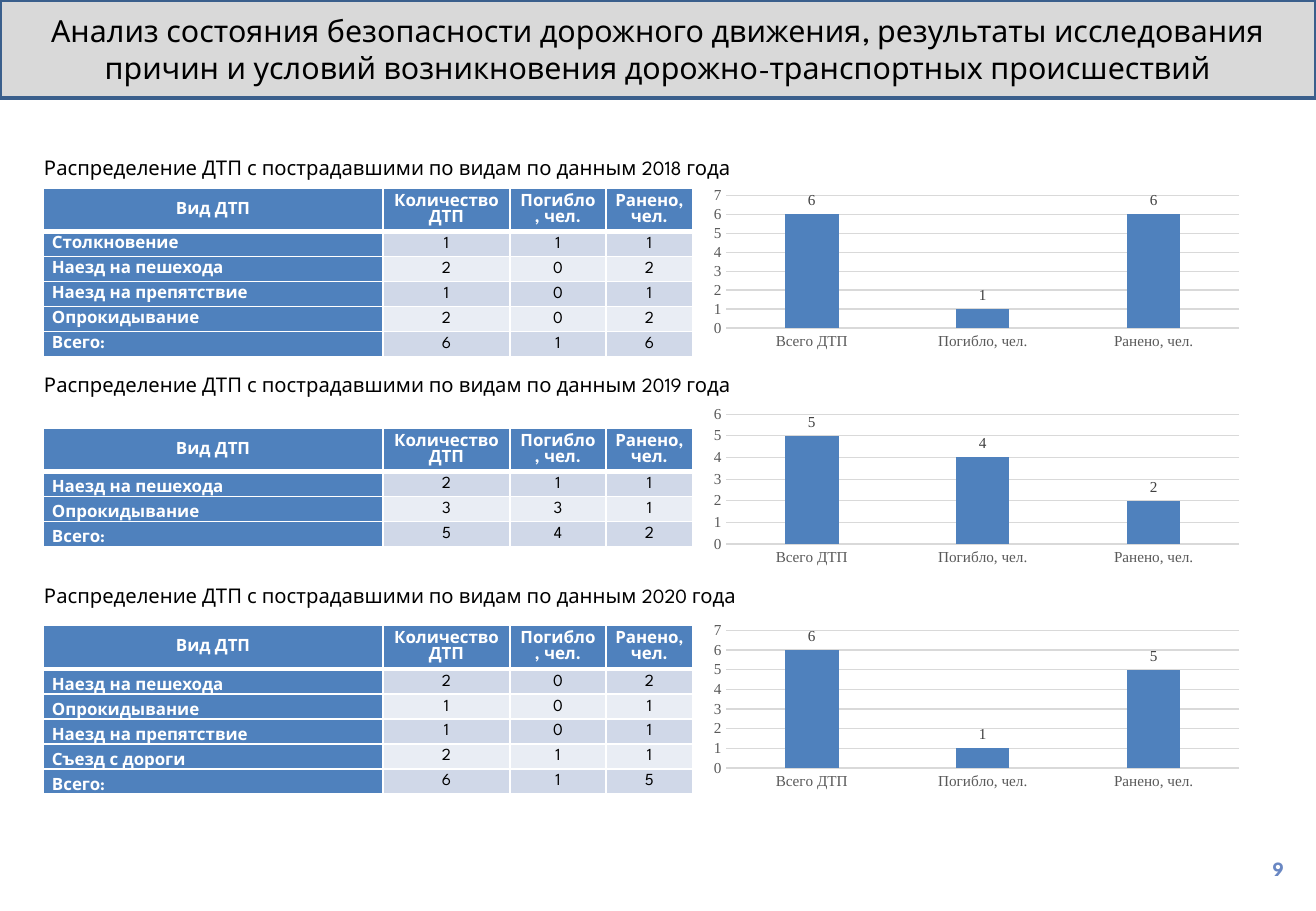
import pptx
import pptx.util
import pptx.chart.data
import pptx.dml.color
import pptx.enum.chart
import pptx.enum.shapes
import pptx.enum.text
import pptx.oxml

RGBColor = pptx.dml.color.RGBColor
BLACK = RGBColor(0x00, 0x00, 0x00)
WHITE = RGBColor(0xFF, 0xFF, 0xFF)
BLUE = RGBColor(0x4F, 0x81, 0xBD)
BORDER = RGBColor(0x3A, 0x5F, 0x8C)
BAND = RGBColor(0xD0, 0xD8, 0xE8)
PALE = RGBColor(0xE9, 0xED, 0xF4)
TITLE_GRAY = RGBColor(0xD9, 0xD9, 0xD9)
AXIS_TEXT = RGBColor(0x59, 0x59, 0x59)
LABEL_TEXT = RGBColor(0x40, 0x40, 0x40)
NUMBER = RGBColor(0x69, 0x87, 0xC3)

PX = 7526
SANS = "League Spartan"
SERIF = "Times New Roman"
ALIGN = pptx.enum.text.PP_ALIGN
ANCHOR = pptx.enum.text.MSO_ANCHOR
XL = pptx.enum.chart
NS = "http://schemas.openxmlformats.org/drawingml/2006/main"


def set_font(font, color, **values):
    for name, value in values.items():
        setattr(font, name, pptx.util.Pt(value) if name == "size" else value)
    font.color.rgb = color


def set_text(tf, text, align, color, **values):
    tf.word_wrap = True
    p = tf.paragraphs[0]
    p.alignment = align
    r = p.add_run()
    r.text = text
    set_font(r.font, color, name=SANS, **values)
    return p


prs = pptx.Presentation()
prs.slide_width, prs.slide_height = 1316 * PX, 911 * PX
s = prs.slides.add_slide(prs.slide_layouts[6])

title = s.shapes.add_shape(pptx.enum.shapes.MSO_SHAPE.RECTANGLE, 0, 0, 1316 * PX, 98 * PX)
title.shadow.inherit = False
title.fill.solid()
title.fill.fore_color.rgb = TITLE_GRAY
title.line.color.rgb = BORDER
title.line.width = pptx.util.Pt(2)
title.text_frame.vertical_anchor = ANCHOR.MIDDLE
set_text(title.text_frame, "Анализ состояния безопасности дорожного движения, результаты исследования "
         "причин и условий возникновения дорожно-транспортных происшествий", ALIGN.CENTER, BLACK, size=18)

header = ["Вид ДТП", "Количество ДТП", "Погибло, чел.", "Ранено, чел."]
col_widths = [340, 127, 96, 87]
years = [
    {"year": 2018, "caption": 149, "table": 188, "head": 34, "anchor": ANCHOR.MIDDLE,
     "chart": (183, 171), "max": 7,
     "rows": [["Столкновение", 1, 1, 1], ["Наезд на пешехода", 2, 0, 2],
              ["Наезд на препятствие", 1, 0, 1], ["Опрокидывание", 2, 0, 2], ["Всего:", 6, 1, 6]]},
    {"year": 2019, "caption": 366, "table": 428, "head": 42, "anchor": ANCHOR.BOTTOM,
     "chart": (402, 168), "max": 6,
     "rows": [["Наезд на пешехода", 2, 1, 1], ["Опрокидывание", 3, 3, 1], ["Всего:", 5, 4, 2]]},
    {"year": 2020, "caption": 577, "table": 625, "head": 44, "anchor": ANCHOR.BOTTOM,
     "chart": (618, 176), "max": 7,
     "rows": [["Наезд на пешехода", 2, 0, 2], ["Опрокидывание", 1, 0, 1],
              ["Наезд на препятствие", 1, 0, 1], ["Съезд с дороги", 2, 1, 1], ["Всего:", 6, 1, 5]]},
]

for item in years:
    caption = s.shapes.add_textbox(32 * PX, item["caption"] * PX, 756 * PX, 36 * PX)
    tf = caption.text_frame
    tf.vertical_anchor = ANCHOR.MIDDLE
    tf.auto_size = pptx.enum.text.MSO_AUTO_SIZE.SHAPE_TO_FIT_TEXT
    set_text(tf, f"Распределение ДТП с пострадавшими по видам по данным {item['year']} года",
             ALIGN.JUSTIFY, BLACK, size=12)

    rows = [header] + item["rows"]
    heights = [item["head"]] + [25] * len(item["rows"])
    table = s.shapes.add_table(len(rows), 4, 43 * PX, item["table"] * PX,
                               sum(col_widths) * PX, sum(heights) * PX).table
    for col, width in zip(table.columns, col_widths):
        col.width = width * PX
    for i, row in enumerate(rows):
        table.rows[i].height = heights[i] * PX
        for j, value in enumerate(row):
            cell = table.cell(i, j)
            is_head = i == 0 or j == 0
            is_name = i > 0 and j == 0
            formats = {"margin_left": 9 * PX, "margin_right": 9 * PX, "margin_top": 0, "margin_bottom": 0,
                       "vertical_anchor": item["anchor"] if is_name else ANCHOR.MIDDLE}
            for name, setting in formats.items():
                setattr(cell, name, setting)
            p = set_text(cell.text_frame, str(value), ALIGN.LEFT if is_name else ALIGN.CENTER,
                         WHITE if is_head else BLACK, size=10, bold=is_head)
            p.line_spacing = 1.07
            tcPr = cell._tc.get_or_add_tcPr()
            for side in ("lnL", "lnR", "lnT", "lnB"):
                thick = (i == 0 and side == "lnB") or (i == 1 and side == "lnT")
                tcPr.append(pptx.oxml.parse_xml(
                    f'<a:{side} xmlns:a="{NS}" w="{38100 if thick else 12700}"><a:solidFill>'
                    f'<a:srgbClr val="{WHITE}"/></a:solidFill></a:{side}>'))
            cell.fill.solid()
            cell.fill.fore_color.rgb = BLUE if is_head else BAND if i % 2 else PALE

    data = pptx.chart.data.CategoryChartData()
    data.categories = ["Всего ДТП", "Погибло, чел.", "Ранено, чел."]
    data.add_series("Series 1", item["rows"][-1][1:])
    top, height = item["chart"]
    chart = s.shapes.add_chart(XL.XL_CHART_TYPE.COLUMN_CLUSTERED, 703 * PX, top * PX,
                               547 * PX, height * PX, data).chart
    set_font(chart.font, BLACK, name="Calibri", size=10)
    chart.has_legend = False
    chart.has_title = False
    for axis in (chart.category_axis, chart.value_axis):
        axis.major_tick_mark = XL.XL_TICK_MARK.NONE
        axis.minor_tick_mark = XL.XL_TICK_MARK.NONE
        set_font(axis.tick_labels.font, AXIS_TEXT, name=SERIF, size=9)
    val_axis = chart.value_axis
    for name, setting in {"minimum_scale": 0, "maximum_scale": item["max"], "major_unit": 1}.items():
        setattr(val_axis, name, setting)
    val_axis.format.line.fill.background()
    for line in (chart.category_axis.format.line, val_axis.major_gridlines.format.line):
        line.color.rgb = TITLE_GRAY
        line.width = pptx.util.Pt(0.75)
    plot = chart.plots[0]
    labels = plot.series[0].data_labels
    for name, setting in {"gap_width": 219, "overlap": -27, "vary_by_categories": False}.items():
        setattr(plot, name, setting)
    plot.series[0].format.fill.solid()
    plot.series[0].format.fill.fore_color.rgb = BLUE
    labels.show_value = True
    labels.position = XL.XL_LABEL_POSITION.OUTSIDE_END
    set_font(labels.font, LABEL_TEXT, name=SERIF, size=9)

number = s.shapes.add_textbox(989 * PX, 830 * PX, 307 * PX, 63 * PX)
number.text_frame.vertical_anchor = ANCHOR.BOTTOM
number.text_frame.margin_bottom = 12 * PX
set_text(number.text_frame, "9", ALIGN.RIGHT, NUMBER, size=12, bold=True)

prs.save("out.pptx")
